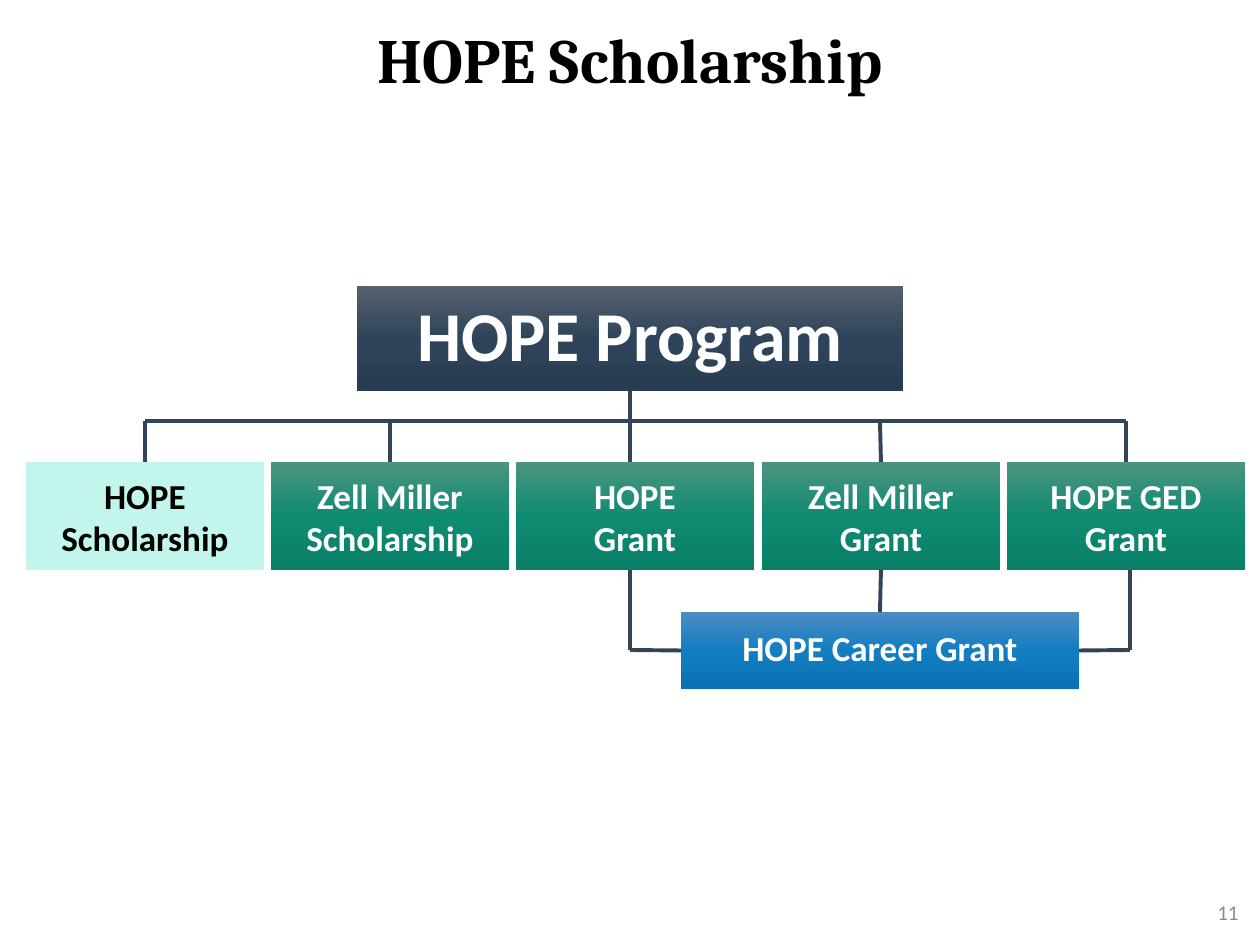
from copy import deepcopy

from pptx import Presentation
from pptx.dml.color import RGBColor
from pptx.enum.shapes import MSO_CONNECTOR, MSO_SHAPE
from pptx.enum.text import MSO_ANCHOR, PP_ALIGN
from pptx.oxml.ns import qn
from pptx.util import Emu, Pt

COLORS = {
    "black": "000000",
    "white": "FFFFFF",
    "gray": "8C8C8C",
    "line": "314458",
    "mint": "C2F5EB",
}
GRADIENTS = {
    "navy": ("56616F", "2F445A", "283C52"),
    "green": ("4C9480", "0F8B71", "098068"),
    "blue": ("4D8BC4", "127EC1", "0971B3"),
}
TOP, LEFT, BOTTOM, RIGHT = range(4)


def px(length):
    return Emu(round(length * 914400 / 126))


class Chart:
    """Draws the styled elements of an organization chart on one slide."""

    body_font = "Calibri"
    line_width = Pt(2.25)

    def __init__(self, page):
        self.page = page

    def add_lines(self, shape, lines, size, color, font=body_font, bold=True,
                  align=PP_ALIGN.CENTER, spacing=None, inset=None):
        frame = shape.text_frame
        frame.word_wrap = True
        frame.vertical_anchor = MSO_ANCHOR.MIDDLE
        if inset is not None:
            frame.margin_left = frame.margin_right = px(inset)
            frame.margin_top = frame.margin_bottom = px(inset)
        for index, line in enumerate(lines):
            para = frame.add_paragraph() if index else frame.paragraphs[0]
            para.alignment = align
            if spacing:
                para.line_spacing = spacing
            span = para.add_run()
            span.text = line
            span.font.name = font
            span.font.size = Pt(size)
            span.font.bold = bold
            span.font.color.rgb = RGBColor.from_string(COLORS[color])

    def text(self, left, top, width, height, line, size, color, **style):
        box = self.page.shapes.add_textbox(px(left), px(top), px(width), px(height))
        self.add_lines(box, [line], size, color, **style)

    def paint(self, box, fill):
        """Fill with a plain color, or with a three-stop gradient from top to bottom."""
        if fill in COLORS:
            box.fill.solid()
            box.fill.fore_color.rgb = RGBColor.from_string(COLORS[fill])
            return
        box.fill.gradient()
        box.fill.gradient_angle = 270
        stop_list = box._element.spPr.find(qn("a:gradFill")).find(qn("a:gsLst"))
        stop_list.insert(1, deepcopy(stop_list[0]))
        for index, (stop, color) in enumerate(zip(box.fill.gradient_stops, GRADIENTS[fill])):
            stop.position = index / 2
            stop.color.rgb = RGBColor.from_string(color)

    def box(self, left, top, width, height, lines, fill, size=20, color="white", **style):
        box = self.page.shapes.add_shape(
            MSO_SHAPE.RECTANGLE, px(left), px(top), px(width), px(height))
        box.shadow.inherit = False
        box.line.fill.background()
        self.paint(box, fill)
        self.add_lines(box, lines, size, color, **style)
        return box

    def line(self, x1, y1, x2, y2, begin=None, end=None):
        """Draw a line; begin and end are (box, side) pairs to join."""
        line = self.page.shapes.add_connector(
            MSO_CONNECTOR.STRAIGHT, px(x1), px(y1), px(x2), px(y2))
        if begin:
            line.begin_connect(*begin)
        if end:
            line.end_connect(*end)
        line.line.width = self.line_width
        line.line.color.rgb = RGBColor.from_string(COLORS["line"])
        properties = line._element.spPr
        properties.append(properties.makeelement(qn("a:effectLst"), {}))


def main():
    deck = Presentation()
    deck.slide_width, deck.slide_height = px(1260), px(945)
    chart = Chart(deck.slides.add_slide(deck.slide_layouts[6]))

    chart.text(0, 0, 1260, 127, "HOPE Scholarship", 36, "black",
               font="Cambria", spacing=0.9)

    program = chart.box(357, 286, 546, 105, ["HOPE Program"], "navy",
                        size=40, spacing=0.9, inset=3)
    awards = [
        ("HOPE", "Scholarship"),
        ("Zell Miller", "Scholarship"),
        ("HOPE", "Grant"),
        ("Zell Miller", "Grant"),
        ("HOPE GED", "Grant"),
    ]
    row_top, row_height, row_width = 462, 108, 238
    row_bottom = row_top + row_height
    boxes = []
    for index, lines in enumerate(awards):
        fill, color = ("green", "white") if index else ("mint", "black")
        boxes.append(chart.box(26 + round(index * 245.25), row_top, row_width, row_height,
                               lines, fill, color=color, inset=1))
    career = chart.box(681, 612, 398, 77, ["HOPE Career Grant"], "blue",
                       spacing=0.9, inset=1)

    bus, middle = 421, 650
    first, second, center, fourth, last = 145, 390, 630, 880, 1126
    chart.line(first, bus, last, bus)
    chart.line(center, 391, center, row_top, begin=(program, BOTTOM))
    for x, index in ((first, 0), (second, 1), (fourth, 3), (last, 4)):
        chart.line(x, bus, x, row_top, end=(boxes[index], TOP))

    chart.line(fourth, row_bottom, fourth, 612, begin=(boxes[3], BOTTOM), end=(career, TOP))
    for x, edge, side in ((center, 681, LEFT), (1130, 1079, RIGHT)):
        chart.line(x, row_bottom, x, middle)
        chart.line(x, middle, edge, middle, end=(career, side))

    chart.text(1168, 887, 83, 50, "11", 12, "gray", bold=False, align=PP_ALIGN.RIGHT)
    deck.save("out.pptx")


if __name__ == "__main__":
    main()
